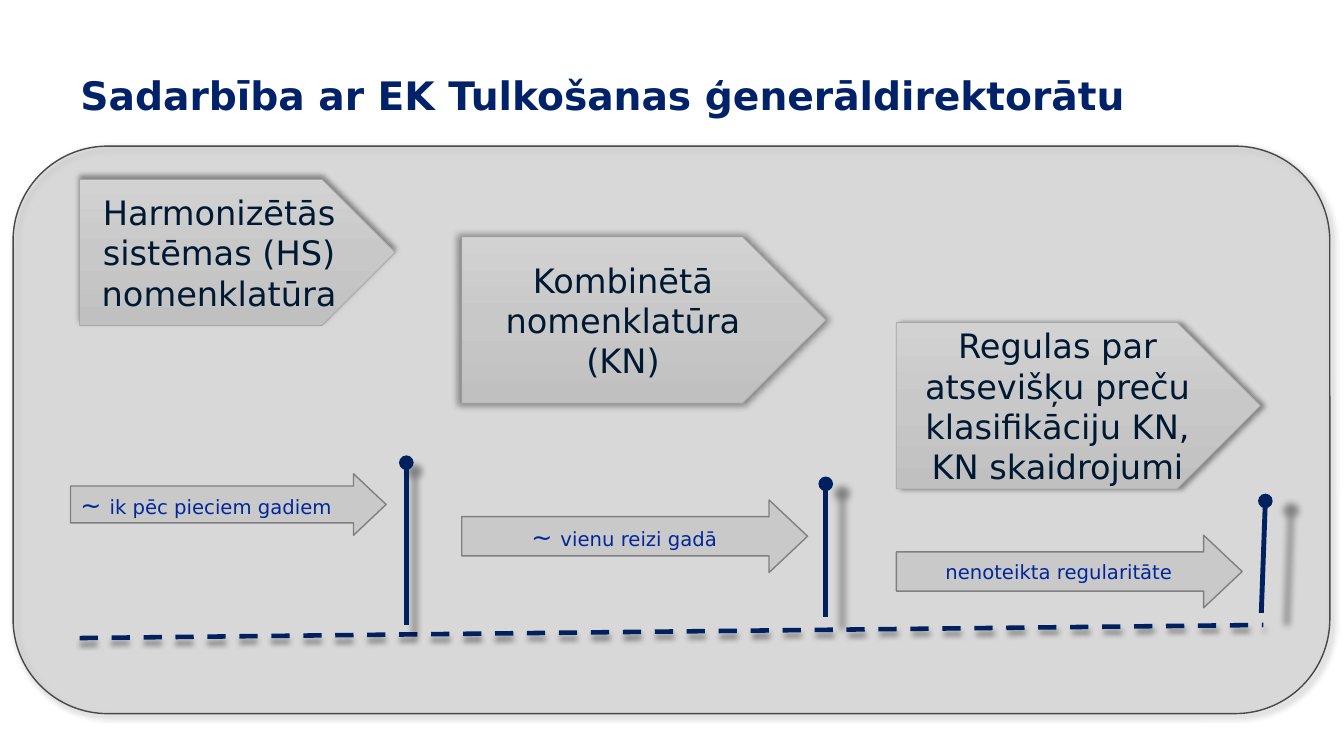
from lxml.etree import SubElement
from pptx import Presentation
from pptx.dml.color import RGBColor as RGB
from pptx.enum.dml import MSO_LINE as Dash
from pptx.enum.shapes import MSO_CONNECTOR as Conn, MSO_SHAPE as Shape
from pptx.enum.text import MSO_ANCHOR as Anchor, PP_ALIGN as Align
from pptx.oxml.ns import qn
from pptx.util import Inches, Pt

TITLE = "Sadarbība ar EK Tulkošanas ģenerāldirektorātu"
LEFT, MID = Align.LEFT, Align.CENTER

# Shadows: blur (pt), distance (pt), direction (degrees), scale (%)
GLOW = (5, 0, 0, 102)
STEPS = [
    {"plate": (0.79, 1.78, 3.13, 1.45), "shade": (4, 3, 270, 100),
     "text": ["Harmonizētās sistēmas (HS)", "nomenklatūra"],
     "arrow": (0.7, 4.7, 3.13, 0.61), "shaft": 0.6, "align": LEFT,
     "lead": "~ ", "pace": "ik pēc pieciem gadiem",
     "stem": (4.03, 4.59, 4.03, 6.2)},
    {"plate": (4.58, 2.35, 3.61, 1.65), "shade": GLOW,
     "text": ["Kombinētā nomenklatūra (KN)"],
     "arrow": (4.58, 4.96, 3.43, 0.72), "shaft": 0.54, "align": MID,
     "lead": "~ ", "pace": "vienu reizi gadā",
     "stem": (8.19, 4.8, 8.19, 6.12)},
    {"plate": (8.89, 3.2, 3.61, 1.65), "shade": (4, 3, 0, 100),
     "text": ["Regulas par atsevišķu preču klasifikāciju KN,",
              "KN skaidrojumi"],
     "arrow": (8.89, 5.31, 3.43, 0.72), "shaft": 0.54, "align": MID,
     "lead": "", "pace": "nenoteikta regularitāte",
     "stem": (12.55, 4.97, 12.51, 6.08)},
]
PANEL = (0.13, 1.45, 13.06, 5.63)
AXIS = (0.79, 6.33, 12.53, 6.2)

THEME = {
    "font": "DejaVu Sans",
    "title": {"size": 28, "color": "012269", "bold": True},
    "plate": {"size": 24, "color": "001933", "bold": False},
    "lead": {"size": 18, "color": "002699", "bold": False},
    "pace": {"size": 14, "color": "002699", "bold": False},
    "panel": "A5A5A5", "edge": "484848", "rim": "A5A5A5",
    "grad": [(0, "D2D2D2"), (50, "C8C8C8"), (100, "C0C0C0")],
    "arrow": "C9C9C9", "trim": "808080", "line": "002060",
}


def node(parent, tag, **attrs):
    return SubElement(parent, qn(tag), {k: str(v) for k, v in attrs.items()})


def cast(shape, blur, dist, angle, scale):
    """Give a shape or connector a soft outer shadow."""
    props = shape._element.spPr
    box = props.find(qn("a:effectLst"))
    if box is None:
        box = node(props, "a:effectLst")
    outer = node(box, "a:outerShdw", blurRad=Pt(blur), dist=Pt(dist),
                 dir=angle * 60000, sx=scale * 1000, sy=scale * 1000,
                 algn="ctr", rotWithShape=0)
    node(node(outer, "a:srgbClr", val="000000"), "a:alpha", val=40000)


def blend(shape):
    """Fill a shape with the downward gradient of the theme."""
    shape.fill.gradient()
    grad = shape._element.spPr.find(qn("a:gradFill"))
    for child in list(grad):
        grad.remove(child)
    stops = node(grad, "a:gsLst")
    for place, color in THEME["grad"]:
        node(node(stops, "a:gs", pos=place * 1000), "a:srgbClr", val=color)
    node(grad, "a:lin", ang=5400000, scaled=0)


def write(para, text, style):
    run = para.add_run()
    run.text = text
    look = THEME[style]
    values = {"name": THEME["font"], "size": Pt(look["size"]),
              "bold": look["bold"]}
    for key, value in values.items():
        setattr(run.font, key, value)
    run.font.color.rgb = RGB.from_string(look["color"])


def frame(shape):
    body = shape.text_frame
    body.word_wrap = True
    body.vertical_anchor = Anchor.MIDDLE
    return body


def block(slide, kind, box, edge, width, fill=None):
    shape = slide.shapes.add_shape(kind, *map(Inches, box))
    shape.shadow.inherit = False
    if fill:
        shape.fill.solid()
        shape.fill.fore_color.rgb = RGB.from_string(fill)
    else:
        blend(shape)
    shape.line.color.rgb = RGB.from_string(edge)
    shape.line.width = Pt(width)
    return shape


def stroke(slide, ends, width, shade, dash=None, dot=False):
    line = slide.shapes.add_connector(Conn.STRAIGHT, *map(Inches, ends))
    line.line.color.rgb = RGB.from_string(THEME["line"])
    line.line.width = Pt(width)
    if dash:
        line.line.dash_style = dash
    if dot:
        node(line.line._get_or_add_ln(), "a:headEnd", type="oval")
    cast(line, *shade)


def draw_step(slide, step):
    plate = block(slide, Shape.PENTAGON, step["plate"], THEME["rim"], 0.5)
    cast(plate, *step["shade"])
    body = frame(plate)
    for i, text in enumerate(step["text"]):
        para = body.add_paragraph() if i else body.paragraphs[0]
        para.alignment = MID
        write(para, text, "plate")

    arrow = block(slide, Shape.RIGHT_ARROW, step["arrow"], THEME["trim"], 1,
                  THEME["arrow"])
    arrow.adjustments[0] = step["shaft"]
    arrow.adjustments[1] = 0.53
    para = frame(arrow).paragraphs[0]
    para.alignment = step["align"]
    if step["lead"]:
        write(para, step["lead"], "lead")
    write(para, step["pace"], "pace")
    stroke(slide, step["stem"], 3.5, GLOW, dot=True)


def main():
    deck = Presentation()
    deck.slide_width, deck.slide_height = Inches(13.33), Inches(7.5)
    slide = deck.slides.add_slide(deck.slide_layouts[6])

    panel = block(slide, Shape.ROUNDED_RECTANGLE, PANEL, THEME["edge"], 1,
                  THEME["panel"])
    tint = panel._element.spPr.find(qn("a:solidFill"))[0]
    node(tint, "a:alpha", val=23000)
    cast(panel, 4, 3, 45, 100)

    title = slide.shapes.add_textbox(*map(Inches, (0.7, 0.4, 11.5, 1.15)))
    para = frame(title).paragraphs[0]
    para.line_spacing = 0.9
    write(para, TITLE, "title")

    stroke(slide, AXIS, 3.25, (4, 3, 90, 100), dash=Dash.DASH)
    for step in STEPS:
        draw_step(slide, step)
    deck.save("out.pptx")


if __name__ == "__main__":
    main()
